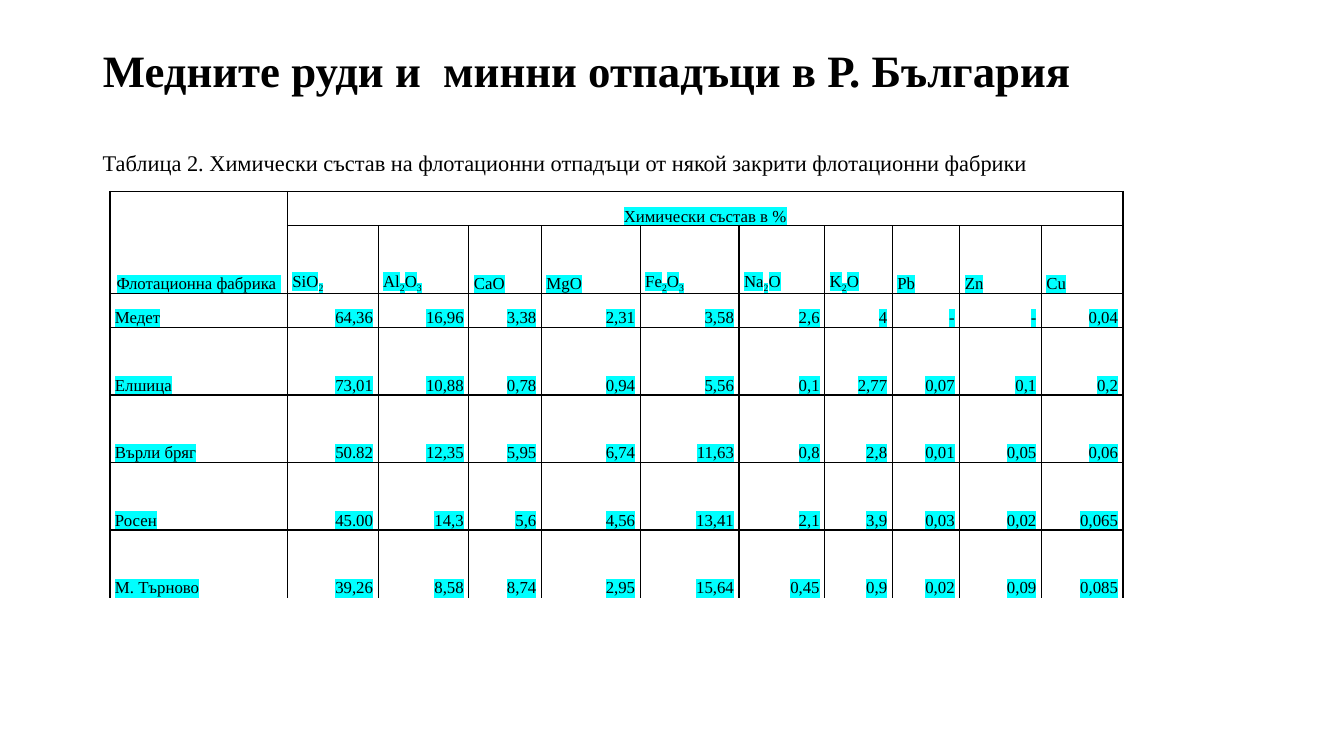
from dataclasses import dataclass
from itertools import groupby

from lxml.etree import SubElement
from pptx import Presentation
from pptx.dml.color import RGBColor
from pptx.enum.text import MSO_ANCHOR, MSO_AUTO_SIZE, PP_ALIGN
from pptx.oxml.ns import qn
from pptx.util import Inches, Pt

FONT = "Times New Roman"
BLACK = "000000"
HIGHLIGHT = "00FFFF"


@dataclass
class Factory:
    name: str
    values: str


FORMULAS = "SiO2 Al2O3 CaO MgO Fe2O3 Na2O K2O Pb Zn Cu".split()
FACTORIES = [
    Factory("Медет", "64,36 16,96 3,38 2,31 3,58 2,6 4 - - 0,04"),
    Factory("Елшица", "73,01 10,88 0,78 0,94 5,56 0,1 2,77 0,07 0,1 0,2"),
    Factory("Върли бряг", "50.82 12,35 5,95 6,74 11,63 0,8 2,8 0,01 0,05 0,06"),
    Factory("Росен", "45.00 14,3 5,6 4,56 13,41 2,1 3,9 0,03 0,02 0,065"),
    Factory("М. Търново", "39,26 8,58 8,74 2,95 15,64 0,45 0,9 0,02 0,09 0,085"),
]
COLUMN_WIDTHS = [1.76, 0.9, 0.9, 0.72, 0.98, 0.98, 0.85, 0.67, 0.67, 0.81, 0.81]
ROW_HEIGHTS = [0.34, 0.67, 0.34, 0.67, 0.67, 0.67, 0.67]


def color(value: str) -> RGBColor:
    return RGBColor.from_string(value)


def format_run(run, size: float, bold: bool = False) -> None:
    run.font.name = FONT
    run.font.size = Pt(size)
    run.font.bold = bold
    run.font.color.rgb = color(BLACK)


def highlight_run(run) -> None:
    properties = run._r.get_or_add_rPr()
    highlight = SubElement(properties, qn("a:highlight"))
    SubElement(highlight, qn("a:srgbClr"), val=HIGHLIGHT)
    properties.find(qn("a:solidFill")).addnext(highlight)


def style_cell(cell, is_last_row: bool) -> None:
    """Give a cell its borders, insets and empty fill."""
    cell.margin_left = cell.margin_right = Inches(0.05)
    cell.margin_top = cell.margin_bottom = 0
    cell.vertical_anchor = MSO_ANCHOR.BOTTOM
    properties = cell._tc.get_or_add_tcPr()
    for side in "LRTB":
        line = SubElement(properties, qn(f"a:ln{side}"), w=str(Pt(1)))
        if side == "B" and is_last_row:
            SubElement(line, qn("a:noFill"))
        else:
            fill = SubElement(line, qn("a:solidFill"))
            SubElement(fill, qn("a:srgbClr"), val=BLACK)
    cell.fill.background()


def write_cell(cell, text: str, alignment: PP_ALIGN, is_formula: bool = False) -> None:
    """Write highlighted text; digits in a formula become subscripts."""
    paragraph = cell.text_frame.paragraphs[0]
    paragraph.alignment = alignment
    paragraph.line_spacing = 1.07
    if is_formula:
        for is_digit, letters in groupby(text, str.isdigit):
            run = paragraph.add_run()
            run.text = "".join(letters)
            if is_digit:
                run._r.get_or_add_rPr().set("baseline", "-25000")
    else:
        paragraph.text = text
    for run in paragraph.runs:
        format_run(run, 12)
        highlight_run(run)


def add_title(slide) -> None:
    title = slide.shapes.title
    title.left, title.top = Inches(0.92), Inches(0.4)
    title.width, title.height = Inches(11.5), Inches(0.65)
    title.text_frame.text = "Медните руди и  минни отпадъци в Р. България"
    title.text_frame.vertical_anchor = MSO_ANCHOR.MIDDLE
    paragraph = title.text_frame.paragraphs[0]
    paragraph.alignment = PP_ALIGN.LEFT
    paragraph.line_spacing = 0.9
    format_run(paragraph.runs[0], 32, bold=True)


def add_caption(slide) -> None:
    caption = slide.shapes.add_textbox(Inches(0.92), Inches(1.43), Inches(9.51), Inches(0.37))
    text_frame = caption.text_frame
    text_frame.text = (
        "Таблица 2. Химически състав на флотационни отпадъци "
        "от някой закрити флотационни фабрики"
    )
    text_frame.word_wrap = False
    text_frame.auto_size = MSO_AUTO_SIZE.SHAPE_TO_FIT_TEXT
    format_run(text_frame.paragraphs[0].runs[0], 16)


def add_composition_table(slide) -> None:
    row_count, column_count = len(ROW_HEIGHTS), len(COLUMN_WIDTHS)
    table = slide.shapes.add_table(
        row_count, column_count, Inches(1.09), Inches(1.9),
        Inches(sum(COLUMN_WIDTHS)), Inches(sum(ROW_HEIGHTS)),
    ).table
    table.first_row = table.horz_banding = False
    for column, width in zip(table.columns, COLUMN_WIDTHS):
        column.width = Inches(width)
    for row_index, height in enumerate(ROW_HEIGHTS):
        table.rows[row_index].height = Inches(height)
        for cell in table.rows[row_index].cells:
            style_cell(cell, row_index == row_count - 1)

    # Header rows
    table.cell(0, 0).merge(table.cell(1, 0))
    table.cell(0, 1).merge(table.cell(0, column_count - 1))
    write_cell(table.cell(0, 0), "Флотационна фабрика ", PP_ALIGN.CENTER)
    write_cell(table.cell(0, 1), "Химически състав в %", PP_ALIGN.CENTER)
    for column_index, formula in enumerate(FORMULAS, 1):
        write_cell(table.cell(1, column_index), formula, PP_ALIGN.LEFT, is_formula=True)

    # Factory rows
    for row_index, factory in enumerate(FACTORIES, 2):
        write_cell(table.cell(row_index, 0), factory.name, PP_ALIGN.LEFT)
        for column_index, value in enumerate(factory.values.split(), 1):
            write_cell(table.cell(row_index, column_index), value, PP_ALIGN.RIGHT)


def main() -> None:
    presentation = Presentation()
    presentation.slide_width = Inches(13.33)
    presentation.slide_height = Inches(7.5)
    slide = presentation.slides.add_slide(presentation.slide_layouts[5])
    add_title(slide)
    add_caption(slide)
    add_composition_table(slide)
    presentation.save("out.pptx")


if __name__ == "__main__":
    main()
